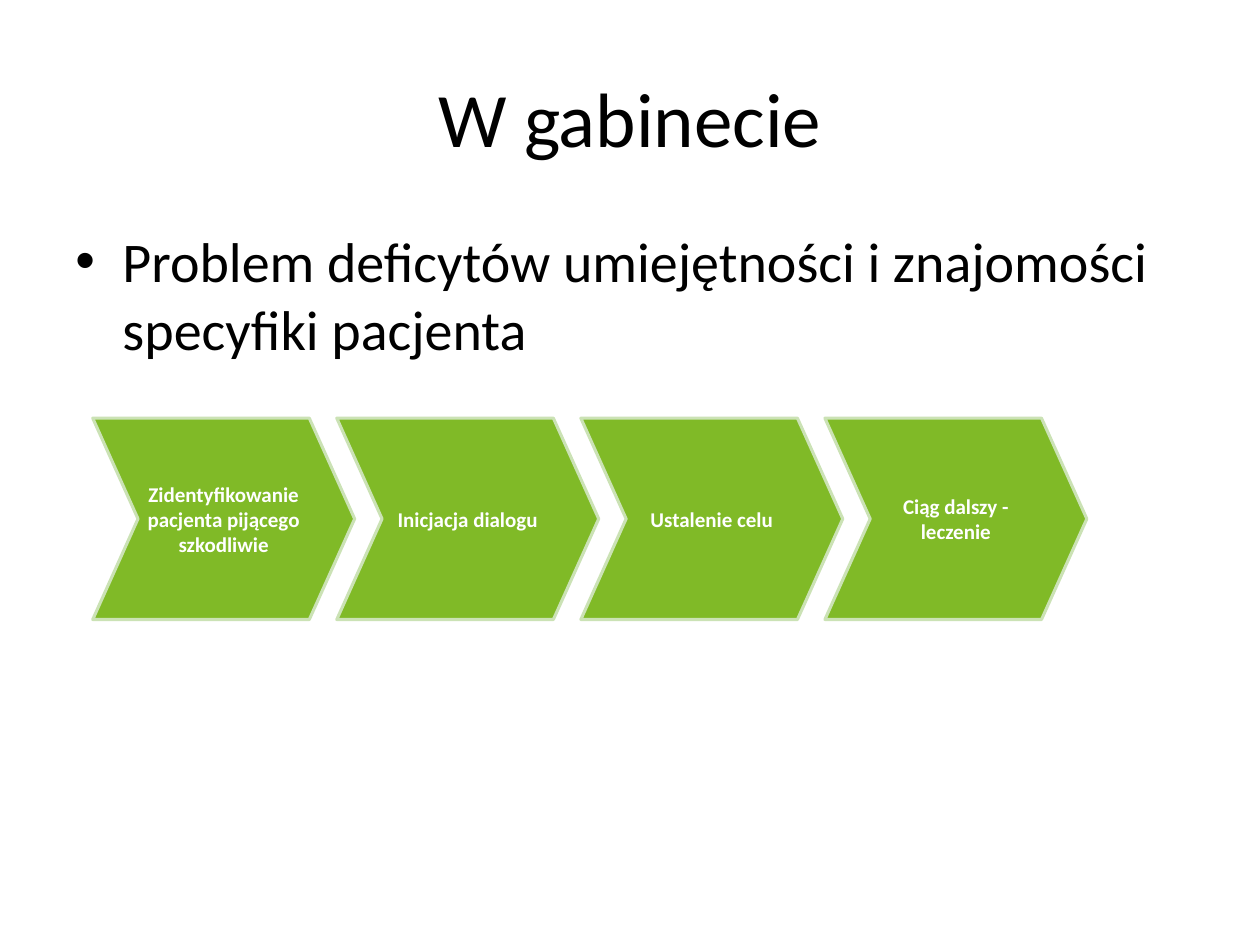
"""Build the consulting-room slide with its four-step chevron row."""
import dataclasses

import lxml.etree
import pptx
import pptx.dml.color
import pptx.enum.shapes
import pptx.enum.text
import pptx.oxml.ns
import pptx.util

Cm = pptx.util.Cm
Pt = pptx.util.Pt
Rgb = pptx.dml.color.RGBColor
Align = pptx.enum.text.PP_ALIGN
Anchor = pptx.enum.text.MSO_ANCHOR


@dataclasses.dataclass(frozen=True)
class Theme:
    font: str = "Calibri"
    ink: str = "000000"
    pale: str = "FFFFFF"
    fill: str = "80BA27"
    edge: str = "CBE2B5"
    title: float = 44
    body: float = 32
    step: float = 12
    line: float = 1.75


THEME = Theme()
STEPS = (
    "Zidentyfikowanie pacjenta pijącego szkodliwie",
    "Inicjacja dialogu",
    "Ustalenie celu",
    "Ciąg dalszy - leczenie",
)


def add_run(para, text, size, color, bold=False):
    run = para.add_run()
    run.text = text
    font = run.font
    font.name = THEME.font
    font.size = Pt(size)
    font.bold = bold
    font.color.rgb = Rgb.from_string(color)


def add_box(slide, top, height, anchor):
    box = slide.shapes.add_textbox(Cm(1.27), Cm(top), Cm(22.86), Cm(height))
    frame = box.text_frame
    frame.word_wrap = True
    frame.vertical_anchor = anchor
    return frame.paragraphs[0]


def add_title(slide, text):
    para = add_box(slide, 0.76, 3.18, Anchor.MIDDLE)
    para.alignment = Align.CENTER
    add_run(para, text, THEME.title, THEME.ink)


def add_point(slide, text):
    para = add_box(slide, 4.45, 12.57, Anchor.TOP)
    add_run(para, text, THEME.body, THEME.ink)
    props = para._p.get_or_add_pPr()
    props.set("marL", str(Cm(0.95)))
    props.set("indent", str(Cm(-0.95)))
    qn = pptx.oxml.ns.qn
    lxml.etree.SubElement(props, qn("a:buFont"), typeface="Arial")
    lxml.etree.SubElement(props, qn("a:buChar"), char="•")


def add_step(slide, left, text):
    kind = pptx.enum.shapes.MSO_SHAPE.CHEVRON
    shape = slide.shapes.add_shape(kind, Cm(left), Cm(8.43), Cm(5.28), Cm(4.06))
    shape.adjustments[0] = 0.225
    shape.shadow.inherit = False
    shape.fill.solid()
    shape.fill.fore_color.rgb = Rgb.from_string(THEME.fill)
    shape.line.color.rgb = Rgb.from_string(THEME.edge)
    shape.line.width = Pt(THEME.line)
    frame = shape.text_frame
    frame.word_wrap = True
    frame.vertical_anchor = Anchor.MIDDLE
    frame.margin_left = frame.margin_right = 0
    frame.margin_top = frame.margin_bottom = 0
    para = frame.paragraphs[0]
    para.alignment = Align.CENTER
    add_run(para, text, THEME.step, THEME.pale, bold=True)


def main():
    deck = pptx.Presentation()
    deck.slide_width = Cm(25.4)
    deck.slide_height = Cm(19.05)
    slide = deck.slides.add_slide(deck.slide_layouts[6])
    for index, text in enumerate(STEPS):
        add_step(slide, 1.87 + 4.92 * index, text)
    add_title(slide, "W gabinecie")
    add_point(slide, "Problem deficytów umiejętności i znajomości specyfiki pacjenta")
    deck.save("out.pptx")


if __name__ == "__main__":
    main()
